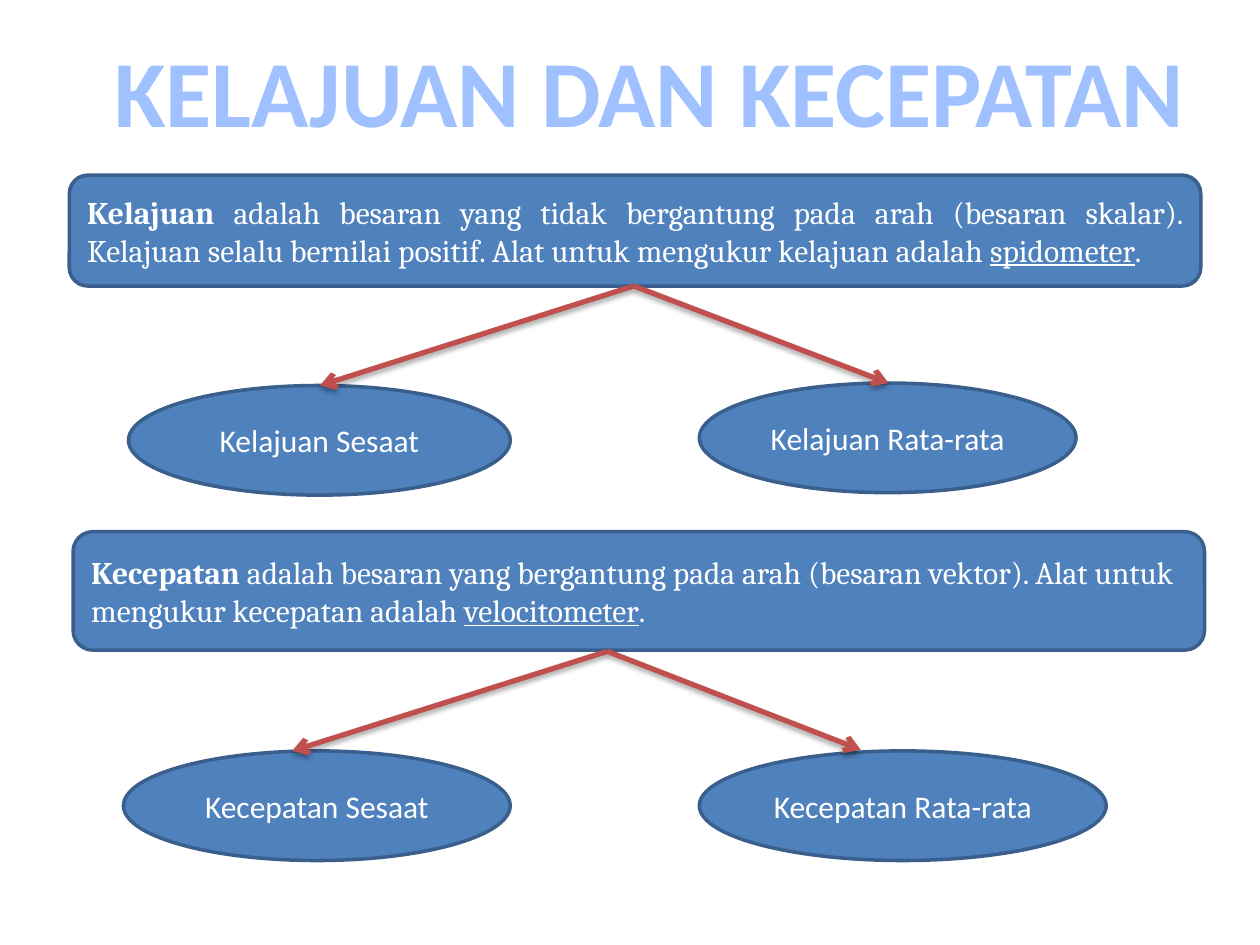
import dataclasses

import lxml.etree
import pptx
import pptx.dml.color
import pptx.enum.shapes
import pptx.enum.text
import pptx.oxml.ns
import pptx.util

Inches = pptx.util.Inches
Align = pptx.enum.text.PP_ALIGN
Shape = pptx.enum.shapes.MSO_SHAPE


@dataclasses.dataclass(frozen=True)
class Theme:
    title: str = "A0C1FF"
    fill: str = "4F81BD"
    outline: str = "3A5F8C"
    arrow: str = "C0504D"
    text: str = "FFFFFF"
    shadow: str = "000000"
    sans: str = "Calibri"
    serif: str = "Cambria"
    title_size: int = 54
    body_size: int = 18
    outline_width: int = 2
    arrow_width: int = 3


THEME = Theme()


def rgb(value):
    return pptx.dml.color.RGBColor.from_string(value)


def add_run(paragraph, text, font, size=THEME.body_size, color=THEME.text,
            bold=False, underline=False):
    run = paragraph.add_run()
    run.text = text
    run.font.name = font
    run.font.size = pptx.util.Pt(size)
    run.font.color.rgb = rgb(color)
    run.font.bold = bold
    run.font.underline = underline


def add_title(slide, text):
    box = slide.shapes.add_textbox(Inches(0.76), Inches(0.21), Inches(8.79), Inches(1.01))
    box.text_frame.word_wrap = False
    box.text_frame.auto_size = pptx.enum.text.MSO_AUTO_SIZE.SHAPE_TO_FIT_TEXT
    paragraph = box.text_frame.paragraphs[0]
    paragraph.alignment = Align.CENTER
    add_run(paragraph, text, THEME.sans, THEME.title_size, THEME.title, bold=True)


def add_panel(slide, kind, position, alignment):
    """Add a filled shape and return its paragraph."""
    shape = slide.shapes.add_shape(kind, *map(Inches, position))
    shape.shadow.inherit = False
    shape.fill.solid()
    shape.fill.fore_color.rgb = rgb(THEME.fill)
    shape.line.color.rgb = rgb(THEME.outline)
    shape.line.width = pptx.util.Pt(THEME.outline_width)
    shape.text_frame.word_wrap = True
    shape.text_frame.vertical_anchor = pptx.enum.text.MSO_ANCHOR.MIDDLE
    paragraph = shape.text_frame.paragraphs[0]
    paragraph.alignment = alignment
    return paragraph


def add_definition(slide, position, alignment, term, explanation, instrument):
    paragraph = add_panel(slide, Shape.ROUNDED_RECTANGLE, position, alignment)
    add_run(paragraph, term + " ", THEME.serif, bold=True)
    add_run(paragraph, explanation + " ", THEME.serif)
    add_run(paragraph, instrument, THEME.serif, underline=True)
    add_run(paragraph, ".", THEME.serif)


def add_kind(slide, position, text):
    paragraph = add_panel(slide, Shape.OVAL, position, Align.CENTER)
    add_run(paragraph, text, THEME.sans)


def add_arrow(slide, start, end):
    connector = slide.shapes.add_connector(
        pptx.enum.shapes.MSO_CONNECTOR.STRAIGHT, *map(Inches, start + end))
    connector.line.color.rgb = rgb(THEME.arrow)
    connector.line.width = pptx.util.Pt(THEME.arrow_width)

    # Arrowhead and soft shadow below the line
    qn = pptx.oxml.ns.qn
    add = lxml.etree.SubElement
    properties = connector.element.spPr
    add(properties.find(qn("a:ln")), qn("a:tailEnd"), type="arrow")
    effects = add(properties, qn("a:effectLst"))
    shadow = add(effects, qn("a:outerShdw"), blurRad=str(pptx.util.Pt(3.1)),
                 dist=str(pptx.util.Pt(1.8)), dir="5400000", rotWithShape="0")
    color = add(shadow, qn("a:srgbClr"), val=THEME.shadow)
    add(color, qn("a:alpha"), val="35000")


def main():
    presentation = pptx.Presentation()
    presentation.slide_width = Inches(10)
    presentation.slide_height = Inches(7.5)
    slide = presentation.slides.add_slide(presentation.slide_layouts[6])

    add_title(slide, "KELAJUAN DAN KECEPATAN")

    # Definitions
    add_definition(
        slide, (0.55, 1.39, 8.98, 0.88), Align.JUSTIFY, "Kelajuan",
        "adalah besaran yang tidak bergantung pada arah (besaran skalar). "
        "Kelajuan selalu bernilai positif. Alat untuk mengukur kelajuan adalah",
        "spidometer")
    add_definition(
        slide, (0.58, 4.22, 8.98, 0.94), Align.LEFT, "Kecepatan",
        "adalah besaran yang bergantung pada arah (besaran vektor). "
        "Alat untuk mengukur kecepatan adalah",
        "velocitometer")

    # Kinds of speed and velocity
    for position, text in (
        ((1.02, 3.06, 3.03, 0.87), "Kelajuan Sesaat"),
        ((5.55, 3.04, 2.99, 0.87), "Kelajuan Rata-rata"),
        ((0.98, 5.96, 3.07, 0.87), "Kecepatan Sesaat"),
        ((5.55, 5.96, 3.23, 0.87), "Kecepatan Rata-rata"),
    ):
        add_kind(slide, position, text)

    # Branches from each definition to its two kinds
    for start, ends in (
        ((5.03, 2.27), ((2.54, 3.06), (7.05, 3.04))),
        ((4.82, 5.17), ((2.32, 5.96), (6.83, 5.95))),
    ):
        for end in ends:
            add_arrow(slide, start, end)

    presentation.save("out.pptx")


if __name__ == "__main__":
    main()
